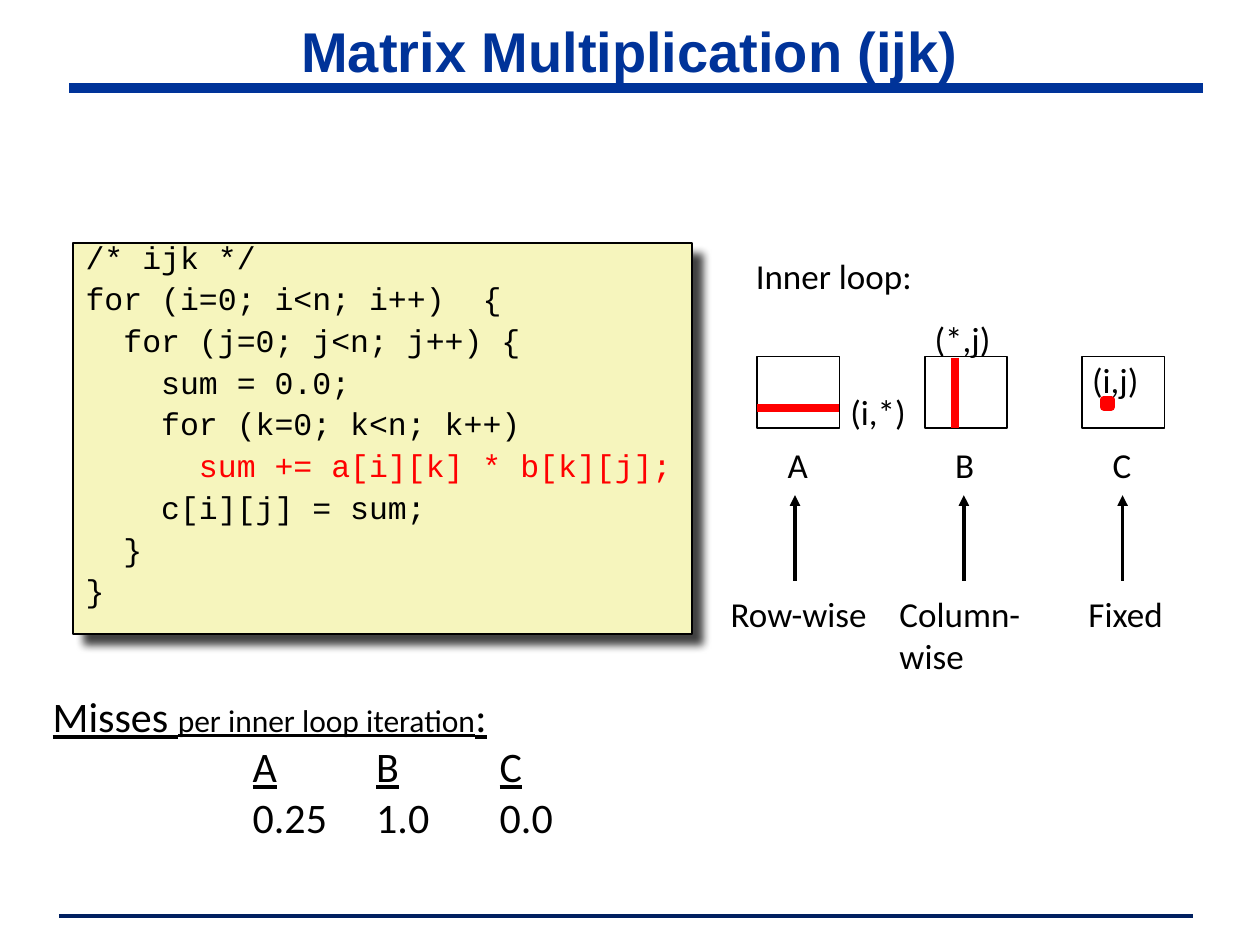
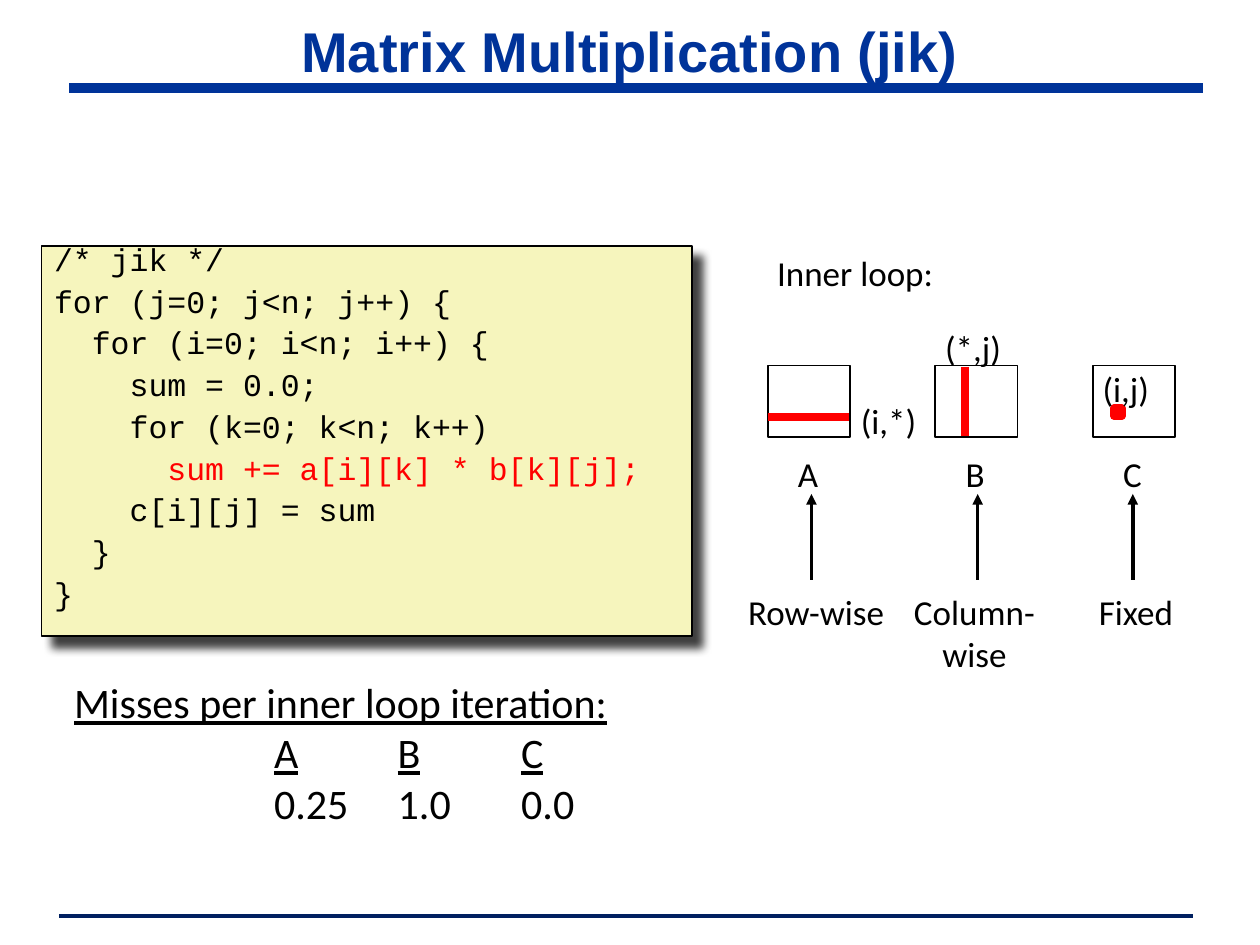
from dataclasses import dataclass
from lxml import etree
from pptx import Presentation
from pptx import util as u
from pptx.dml.color import RGBColor
from pptx.enum import shapes, text
from pptx.oxml import ns, parse_xml

Pt = u.Pt


@dataclass(frozen=True)
class Theme:
    title_blue: RGBColor = RGBColor(0x00, 0x33, 0x99)
    footer_blue: RGBColor = RGBColor(0x00, 0x20, 0x60)
    code_fill: RGBColor = RGBColor(0xF6, 0xF5, 0xBD)
    white: RGBColor = RGBColor(0xFF, 0xFF, 0xFF)
    black: RGBColor = RGBColor(0, 0, 0)
    red: RGBColor = RGBColor(0xFF, 0, 0)
    title_face: str = "Arial"
    body_face: str = "Calibri"
    code_face: str = "Courier New"
    title_size: int = 32
    misses_size: int = 24
    label_size: int = 20
    small_size: int = 18


theme = Theme()
LEFT, CENTER = text.PP_ALIGN.LEFT, text.PP_ALIGN.CENTER
SHADOW = (
    f'<a:outerShdw {ns.nsdecls("a")} blurRad="63500" dist="107950" dir="2700000" algn="tl" rotWithShape="0">'
    '<a:srgbClr val="000000"><a:alpha val="75000"/></a:srgbClr></a:outerShdw>'
)


def write(text_frame, lines, face, size, color=theme.black, align=LEFT, tabs=()):
    for index, runs in enumerate(lines):
        paragraph = text_frame.paragraphs[0] if index == 0 else text_frame.add_paragraph()
        paragraph.alignment = align
        if tabs:
            tab_list = etree.SubElement(paragraph._p.get_or_add_pPr(), ns.qn("a:tabLst"))
            for tab in tabs:
                etree.SubElement(tab_list, ns.qn("a:tab"), pos=str(Pt(tab)), algn="l")
        paragraph.font.name = face
        paragraph.font.size = Pt(size)
        paragraph.font.color.rgb = color
        for content, changes in runs:
            run = paragraph.add_run()
            run.text = content
            if "color" in changes:
                run.font.color.rgb = changes["color"]
            if "size" in changes:
                run.font.size = Pt(changes["size"])
            if "underline" in changes:
                run.font.underline = changes["underline"]


def add_line(slide, start, end, color, width, arrow=False):
    connector = slide.shapes.add_connector(shapes.MSO_CONNECTOR.STRAIGHT, *map(Pt, start + end))
    connector.line.color.rgb = color
    connector.line.width = Pt(width)
    if arrow:
        etree.SubElement(connector.line._get_or_add_ln(), ns.qn("a:tailEnd"), type="triangle")
    etree.SubElement(connector._element.spPr, ns.qn("a:effectLst"))


underlined = {"underline": True}
small_underlined = {"underline": True, "size": theme.small_size}
miss_table = [
    [("\t", {}), ("A", underlined), ("\t", {}), ("B", underlined), ("\t", {}), ("C", underlined)],
    [("\t0.25\t1.0\t0.0", {})],
]
access_patterns = [(("Row-wise",), 93), (("Column-", "wise"), 84), (("Fixed",), 57)]
matrix_offsets = [0, 95.8, 185.8]

slide_data = [
    dict(
        order="ijk",
        code="""/* ijk */
for (i=0; i<n; i++)  {
  for (j=0; j<n; j++) {
    sum = 0.0;
    for (k=0; k<n; k++)
      sum += a[i][k] * b[k][j];
    c[i][j] = sum;
  }
}""",
        code_frame=(41.8, 139, 353.5, 223.2),
        matrices=(432.7, 203.8),
        inner_loop=(424.8, 141.8),
        caption_lefts=(410.4, 506.9, 614.9),
        caption_top=334.8,
        caption_align=LEFT,
        arrows=(454.3, 550.8, 641.5),
        misses_frame=(23, 391, 399.6, 95.8),
        misses=[("Misses ", underlined), ("per inner loop iteration", small_underlined), (":", underlined)],
    ),
    dict(
        order="jik",
        code="""/* jik */
for (j=0; j<n; j++) {
  for (i=0; i<n; i++) {
    sum = 0.0;
    for (k=0; k<n; k++)
      sum += a[i][k] * b[k][j];
    c[i][j] = sum
  }
}""",
        code_frame=(23.8, 140.4, 371.5, 223.2),
        matrices=(438.7, 208.9),
        inner_loop=(437, 140.4),
        caption_lefts=(419.8, 514.8, 620.6),
        caption_top=334.1,
        caption_align=CENTER,
        arrows=(463.7, 558.7, 647.3),
        misses_frame=(35.3, 383, 429.1, 96.5),
        misses=[("Misses per inner loop iteration:", underlined)],
    ),
]

presentation = Presentation()
presentation.slide_width, presentation.slide_height = Pt(720), Pt(540)

for data in slide_data:
    slide = presentation.slides.add_slide(presentation.slide_layouts[6])
    add_line(slide, (33.8, 523.4), (681.8, 523.4), theme.footer_blue, 2.25)
    add_line(slide, (39.6, 50.4), (687.6, 50.4), theme.title_blue, 6)

    title = slide.shapes.add_textbox(Pt(36), Pt(11.5), Pt(648), Pt(33.8))
    title.text_frame.word_wrap = True
    title.text_frame.vertical_anchor = text.MSO_ANCHOR.MIDDLE
    title_runs = [(f"Matrix Multiplication ({data['order']})", {})]
    write(title.text_frame, [title_runs], theme.title_face, theme.title_size, theme.title_blue, CENTER)
    title.text_frame.paragraphs[0].font.bold = True

    x, y = data["matrices"]
    boxes = [(data["code_frame"], theme.code_fill, theme.black, 1)]
    boxes += [((x + offset, y, 47, 41), theme.white, theme.black, 1) for offset in matrix_offsets]
    boxes.append(((x + 198, y + 24.5, 4.3, 4.3), theme.red, theme.red, 4.5))
    box_shapes = []
    for frame, fill, outline, width in boxes:
        shape = slide.shapes.add_shape(shapes.MSO_SHAPE.RECTANGLE, *map(Pt, frame))
        shape.shadow.inherit = False
        shape.fill.solid()
        shape.fill.fore_color.rgb = fill
        shape.line.color.rgb = outline
        shape.line.width = Pt(width)
        box_shapes.append(shape)

    code_box = box_shapes[0]
    code_box._element.spPr.find(ns.qn("a:effectLst")).append(parse_xml(SHADOW))
    code_box.text_frame.vertical_anchor = text.MSO_ANCHOR.TOP
    code_lines = []
    for line in data["code"].split("\n"):
        statement = line.lstrip()
        if statement.startswith("sum +="):
            indent = line[: len(line) - len(statement)]
            code_lines.append([(indent, {}), (statement, {"color": theme.red})])
        else:
            code_lines.append([(line, {})])
    write(code_box.text_frame, code_lines, theme.code_face, theme.small_size)
    for index, paragraph in enumerate(code_box.text_frame.paragraphs):
        paragraph.line_spacing = 0.65
        if index:
            paragraph.space_before = Pt(9.8)

    add_line(slide, (x + 113, y + 0.7), (x + 113, y + 40.5), theme.red, 4.5)
    add_line(slide, (x, y + 29.5), (x + 46.5, y + 29.5), theme.red, 4.5)
    top = data["caption_top"]
    for arrow_x in data["arrows"]:
        add_line(slide, (arrow_x, top - 2.9), (arrow_x, top - 51.8), theme.black, 2, arrow=True)

    labels = [
        (("(i,*)",), x + 46.1, y + 15.8, 46, LEFT),
        (("(*,j)",), x + 94.3, y - 25.9, 47, LEFT),
        (("(i,j)",), x + 184.3, y - 2.2, 41, LEFT),
        (("Inner loop:",), *data["inner_loop"], 104.4, LEFT),
    ]
    for name, offset in zip("ABC", matrix_offsets):
        labels.append(((name,), x + offset + 10.2, y + 46, 26, LEFT))
    for (words, width), left in zip(access_patterns, data["caption_lefts"]):
        labels.append((words, left, top, width, data["caption_align"]))
    for words, left, label_top, width, align in labels:
        label = slide.shapes.add_textbox(Pt(left), Pt(label_top), Pt(width), Pt(7 + 24 * len(words)))
        label.text_frame.word_wrap = False
        write(label.text_frame, [[(word, {})] for word in words], theme.body_face, theme.label_size, align=align)

    misses = slide.shapes.add_textbox(*map(Pt, data["misses_frame"]))
    misses.text_frame.word_wrap = True
    write(
        misses.text_frame,
        [data["misses"], *miss_table],
        theme.body_face,
        theme.misses_size,
        tabs=(114.3, 184.9, 255.5),
    )

presentation.save("out.pptx")
